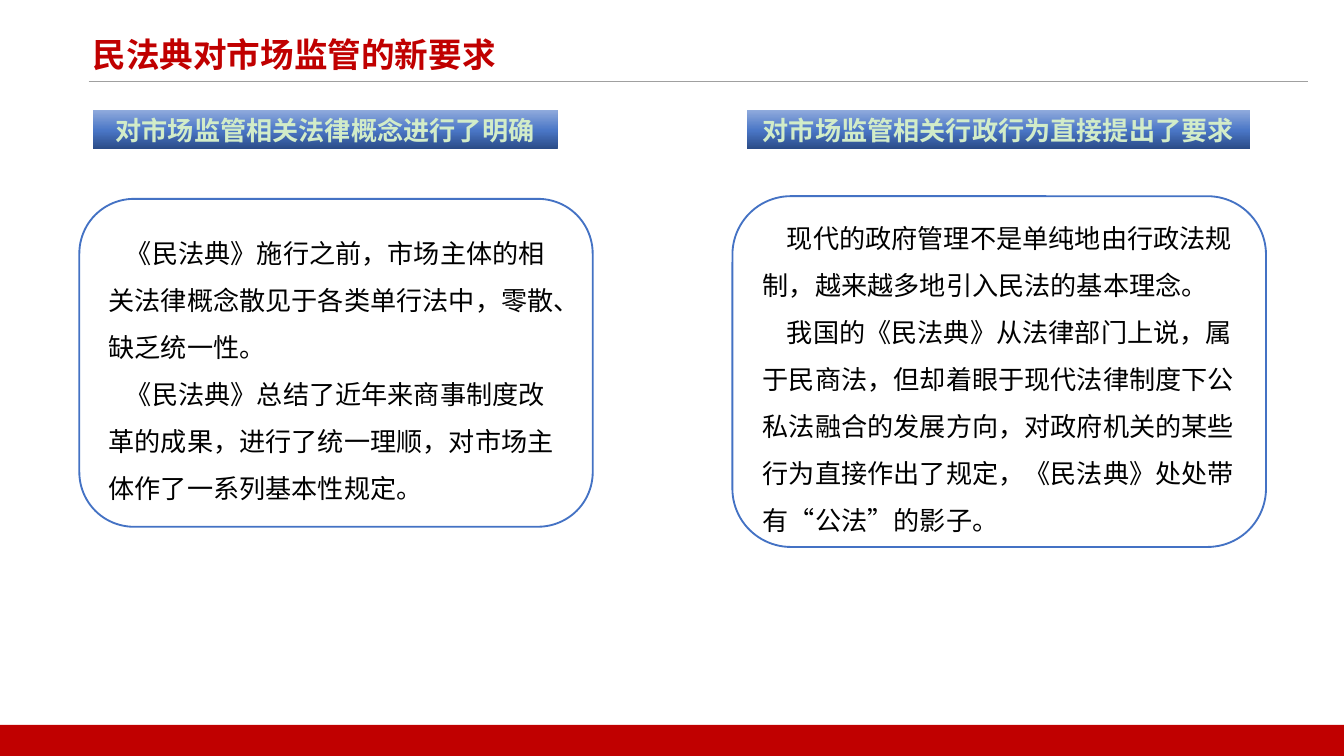
"""Build a slide on the Civil Code's new requirements for market regulation."""
from copy import deepcopy
from typing import NamedTuple

from pptx import Presentation
from pptx.dml.color import RGBColor
from pptx.enum.shapes import MSO_CONNECTOR, MSO_SHAPE
from pptx.enum.text import MSO_ANCHOR, PP_ALIGN
from pptx.oxml.ns import qn
from pptx.shapes.autoshape import Shape
from pptx.slide import Slide
from pptx.util import Inches, Pt
from lxml.etree import SubElement

FONT = "Noto Sans CJK SC"
RED, BLUE, BLACK, PALE, GREY = "C00000", "4472C4", "000000", "D2ECC8", "A0A0A0"
GRADIENT = [(0, "2A4B86"), (0.48, "4A76C6"), (1, "8FAADC")]
PAGE_WIDTH = 10
PAGE_HEIGHT = PAGE_WIDTH * 9 / 16
FOOTER_HEIGHT = 0.23


class Area(NamedTuple):
    left: float
    top: float
    width: float
    height: float


class Topic(NamedTuple):
    heading: str
    heading_area: Area
    body: list[str]
    body_area: Area
    indent: float


TOPICS = [
    Topic(
        "对市场监管相关法律概念进行了明确",
        Area(0.69, 0.82, 3.46, 0.29),
        [
            "《民法典》施行之前，市场主体的相关法律概念散见于各类单行法中，零散、缺乏统一性。",
            "《民法典》总结了近年来商事制度改革的成果，进行了统一理顺，对市场主体作了一系列基本性规定。",
        ],
        Area(0.59, 1.48, 3.82, 2.44),
        0.13,
    ),
    Topic(
        "对市场监管相关行政行为直接提出了要求",
        Area(5.56, 0.82, 3.74, 0.29),
        [
            "现代的政府管理不是单纯地由行政法规制，越来越多地引入民法的基本理念。",
            "我国的《民法典》从法律部门上说，属于民商法，但却着眼于现代法律制度下公私法融合的发展方向，"
            "对政府机关的某些行为直接作出了规定，《民法典》处处带有“公法”的影子。",
        ],
        Area(5.45, 1.46, 3.97, 2.61),
        0.18,
    ),
]


def colour(value: str) -> RGBColor:
    return RGBColor.from_string(value)


def add_box(page: Slide, kind: MSO_SHAPE, area: Area) -> Shape:
    box = page.shapes.add_shape(kind, *map(Inches, area))
    box.shadow.inherit = False
    box.line.fill.background()
    return box


def write(box: Shape, texts: list[str], size: float, ink: str, bold: bool = False,
          align: PP_ALIGN = PP_ALIGN.LEFT, spacing: float = 1.0, indent: float = 0) -> None:
    frame = box.text_frame
    frame.word_wrap = True
    frame.vertical_anchor = MSO_ANCHOR.MIDDLE
    for index, text in enumerate(texts):
        para = frame.add_paragraph() if index else frame.paragraphs[0]
        para.text = text
        para.alignment = align
        para.line_spacing = spacing
        if indent:
            para._p.get_or_add_pPr().set("indent", str(Inches(indent)))
        para.font.size = Pt(size)
        para.font.bold = bold
        para.font.name = FONT
        para.font.color.rgb = colour(ink)
        SubElement(para.font._element, qn("a:ea")).set("typeface", FONT)


def fill_gradient(box: Shape) -> None:
    box.fill.gradient()
    box.fill.gradient_angle = 90
    stop_list = box._element.xpath(".//a:gsLst")[0]
    stop_list.append(deepcopy(stop_list[0]))
    for stop, (position, value) in zip(box.fill.gradient_stops, GRADIENT):
        stop.position = position
        stop.color.rgb = colour(value)


def add_title(page: Slide, text: str) -> None:
    rule = page.shapes.add_connector(
        MSO_CONNECTOR.STRAIGHT, Inches(0.66), Inches(0.61), Inches(9.73), Inches(0.61))
    rule.line.color.rgb = colour(GREY)
    rule.line.width = Pt(0.5)
    SubElement(rule._element.spPr, qn("a:effectLst"))
    title = page.shapes.add_textbox(*map(Inches, Area(0.59, 0.2, 9.09, 0.35)))
    write(title, [text], 18, RED, bold=True)
    title.text_frame.vertical_anchor = MSO_ANCHOR.TOP
    title.text_frame.margin_top = Inches(0.05)
    title.text_frame.margin_bottom = 0


def add_topic(page: Slide, topic: Topic) -> None:
    heading = add_box(page, MSO_SHAPE.RECTANGLE, topic.heading_area)
    fill_gradient(heading)
    write(heading, [topic.heading], 14, PALE, bold=True, align=PP_ALIGN.CENTER)
    body = add_box(page, MSO_SHAPE.ROUNDED_RECTANGLE, topic.body_area)
    body.fill.background()
    body.line.color.rgb = colour(BLUE)
    body.line.width = Pt(1)
    write(body, topic.body, 14, BLACK, spacing=1.5, indent=topic.indent)


def main() -> None:
    deck = Presentation()
    deck.slide_width, deck.slide_height = Inches(PAGE_WIDTH), Inches(PAGE_HEIGHT)
    page = deck.slides.add_slide(deck.slide_layouts[6])
    add_title(page, "民法典对市场监管的新要求")
    footer_area = Area(0, PAGE_HEIGHT - FOOTER_HEIGHT, PAGE_WIDTH, FOOTER_HEIGHT)
    footer = add_box(page, MSO_SHAPE.RECTANGLE, footer_area)
    footer.fill.solid()
    footer.fill.fore_color.rgb = colour(RED)
    for topic in TOPICS:
        add_topic(page, topic)
    deck.save("out.pptx")


if __name__ == "__main__":
    main()
